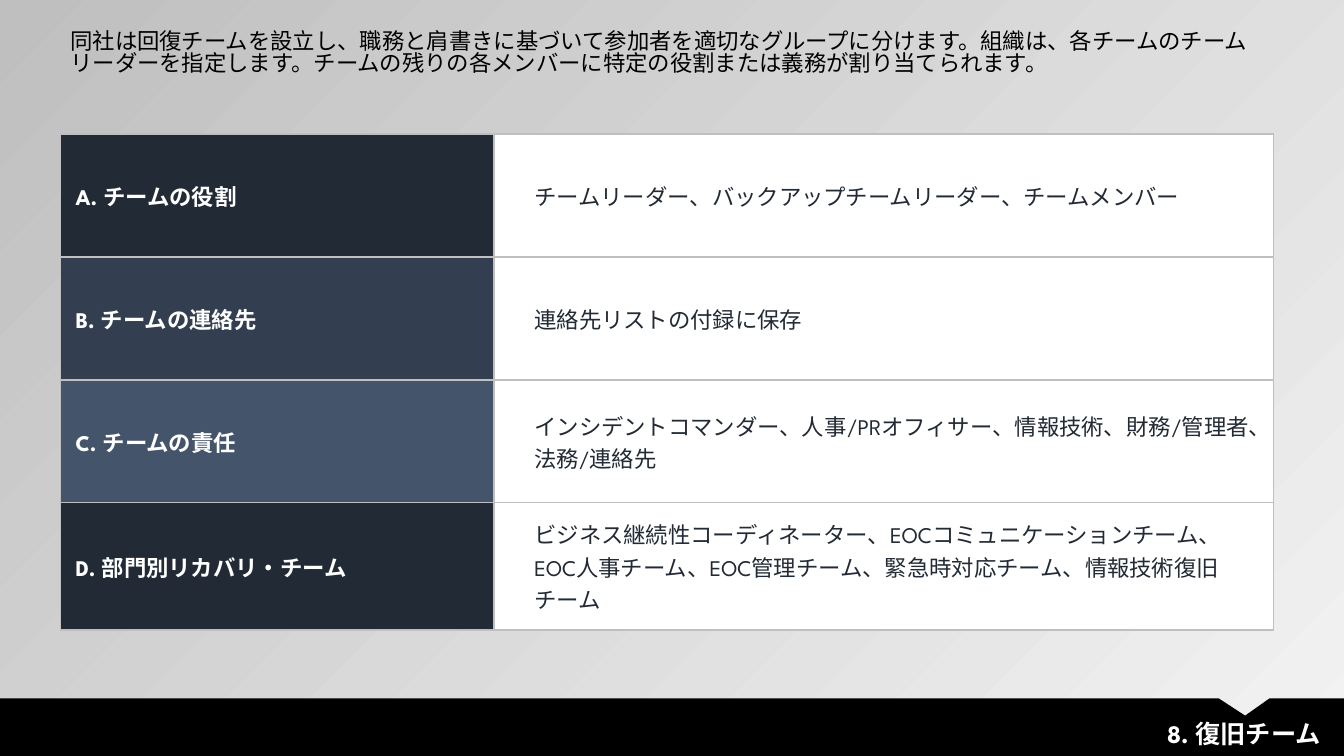
from lxml import etree
from pptx import Presentation
from pptx.dml.color import RGBColor
from pptx.enum.text import MSO_ANCHOR as ANCHOR, MSO_AUTO_SIZE as AUTO, PP_ALIGN as ALIGN
from pptx.oxml.ns import qn
from pptx.util import Inches, Pt

FONT = "League Spartan"
COLORS = {
    "black": "000000", "white": "FFFFFF", "border": "BFBFBF", "light": "F2F2F2",
    "navy": "222A35", "slate": "333F50", "steel": "44546A",
}
INTRO = ("同社は回復チームを設立し、職務と肩書きに基づいて参加者を適切なグループに分けます。"
         "組織は、各チームのチームリーダーを指定します。"
         "チームの残りの各メンバーに特定の役割または義務が割り当てられます。")
ROWS = [
    ("A. チームの役割", "チームリーダー、バックアップチームリーダー、チームメンバー", "navy"),
    ("B. チームの連絡先", "連絡先リストの付録に保存", "slate"),
    ("C. チームの責任",
     "インシデントコマンダー、人事/PRオフィサー、情報技術、財務/管理者、法務/連絡先", "steel"),
    ("D. 部門別リカバリ・チーム",
     "ビジネス継続性コーディネーター、EOCコミュニケーションチーム、EOC人事チーム、"
     "EOC管理チーム、緊急時対応チーム、情報技術復旧チーム", "navy"),
]


def rgb(name):
    return RGBColor.from_string(COLORS[name])


def write(tf, text, color, size=16, bold=False, **para):
    """Write one run, with paragraph attributes given by name."""
    p = tf.paragraphs[0]
    for key, value in para.items():
        setattr(p, key, value)
    r = p.add_run()
    r.text = text
    for key, value in {"name": FONT, "size": Pt(size), "bold": bold}.items():
        setattr(r.font, key, value)
    r.font.color.rgb = rgb(color)


def set_borders(cell, color, width):
    tcPr = cell._tc.get_or_add_tcPr()
    for side in ("a:lnL", "a:lnR", "a:lnT", "a:lnB"):
        ln = etree.SubElement(tcPr, qn(side), w=str(Pt(width)))
        fill = etree.SubElement(ln, qn("a:solidFill"))
        etree.SubElement(fill, qn("a:srgbClr"), val=COLORS[color])


def add_background(slide):
    fill = slide.background.fill
    fill.gradient()
    fill.gradient_angle = 135
    for stop, color in zip(fill.gradient_stops, ("light", "border")):
        stop.color.rgb = rgb(color)


def add_intro(slide, x, y, w, h):
    tf = slide.shapes.add_textbox(Inches(x), Inches(y), Inches(w), Inches(h)).text_frame
    tf.word_wrap = True
    write(tf, INTRO, "black", line_spacing=0.84)


def add_team_table(slide, x, y, w, h):
    table = slide.shapes.add_table(
        len(ROWS), 2, Inches(x), Inches(y), Inches(w), Inches(h)).table
    table.first_row = table.horz_banding = False
    label_w = 4.3
    for column, width in zip(table.columns, (label_w, w - label_w)):
        column.width = Inches(width)
    for i, (label, detail, shade) in enumerate(ROWS):
        parts = ((label, "white", shade, 0.15), (detail, "navy", "white", 0.4))
        for j, (text, color, back, left) in enumerate(parts):
            cell = table.cell(i, j)
            margins = dict.fromkeys(("margin_right", "margin_top", "margin_bottom"), Inches(0.15))
            layout = {"margin_left": Inches(left), "vertical_anchor": ANCHOR.MIDDLE, **margins}
            for key, value in layout.items():
                setattr(cell, key, value)
            set_borders(cell, "border", 1)
            cell.fill.solid()
            cell.fill.fore_color.rgb = rgb(back)
            write(cell.text_frame, text, color, bold=j == 0)


def add_footer(slide, x, y, w, h):
    # Black bar with a notch in its top edge
    notch = [(12.09, 0), (12.35, 0.17), (12.59, 0)]
    outline = [*notch, (w, 0), (w, h), (0, h)]
    builder = slide.shapes.build_freeform(Inches(x), Inches(y), scale=1.0)
    builder.add_line_segments([(Inches(x + dx), Inches(y + dy)) for dx, dy in outline])
    bar = builder.convert_to_shape()
    bar.shadow.inherit = False
    bar.fill.solid()
    bar.fill.fore_color.rgb = rgb("black")
    bar.line.fill.background()

    # Slide title, brought in front of the bar
    title = slide.shapes.title
    box = {"left": x + 4.14, "top": y + 0.15, "width": 9.06, "height": 0.4}
    for key, value in box.items():
        setattr(title, key, Inches(value))
    tf = title.text_frame
    for key, value in {"word_wrap": True, "auto_size": AUTO.NONE,
                       "vertical_anchor": ANCHOR.TOP}.items():
        setattr(tf, key, value)
    write(tf, "8. 復旧チーム", "white", size=18, bold=True, alignment=ALIGN.RIGHT)
    bar._element.addnext(title._element)


def main():
    prs = Presentation()
    prs.slide_width, prs.slide_height = Inches(13.33), Inches(7.5)
    slide = prs.slides.add_slide(prs.slide_layouts[5])
    add_background(slide)
    add_team_table(slide, 0.6, 1.33, 12.03, 4.88)
    add_footer(slide, 0, 6.93, 13.33, 0.57)
    add_intro(slide, 0.6, 0.26, 12.03, 0.91)
    prs.save("out.pptx")


if __name__ == "__main__":
    main()
